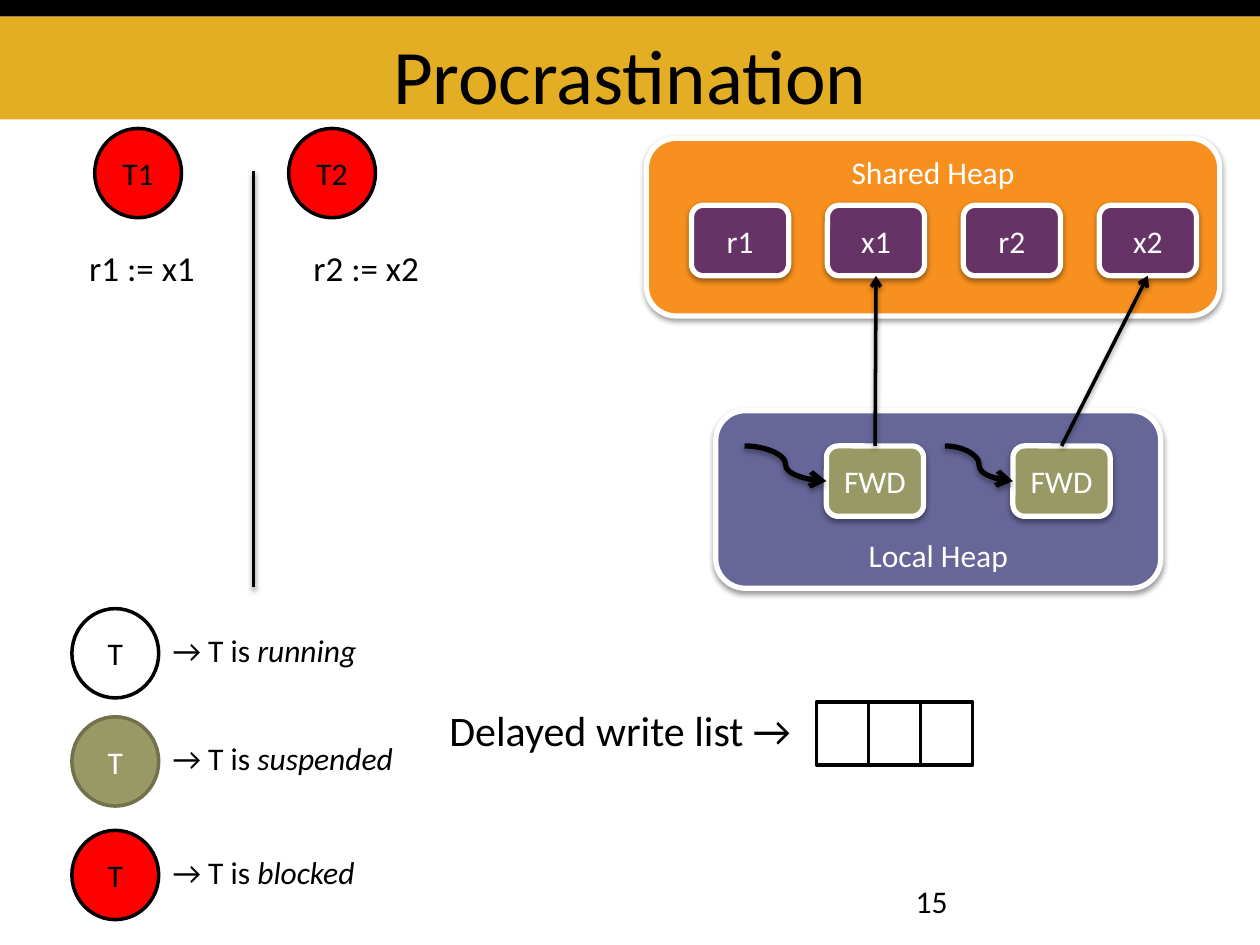
from dataclasses import dataclass
from typing import Any, NamedTuple, Optional

from lxml import etree
from pptx import Presentation
from pptx.dml.color import RGBColor
from pptx.enum.shapes import MSO_CONNECTOR, MSO_SHAPE
from pptx.enum.text import MSO_ANCHOR, PP_ALIGN
from pptx.oxml.ns import qn
from pptx.util import Cm, Pt

RECT, ROUND, OVAL = MSO_SHAPE.RECTANGLE, MSO_SHAPE.ROUNDED_RECTANGLE, MSO_SHAPE.OVAL
LINE, CURVE = MSO_CONNECTOR.STRAIGHT, MSO_CONNECTOR.CURVE
TOP, MIDDLE, BOTTOM = MSO_ANCHOR.TOP, MSO_ANCHOR.MIDDLE, MSO_ANCHOR.BOTTOM
LEFT, CENTER = PP_ALIGN.LEFT, PP_ALIGN.CENTER
TOP_SIDE, BOTTOM_SIDE = 0, 2


class Shade(NamedTuple):
    blur: float
    drop: float
    alpha: int


@dataclass(frozen=True)
class Theme:
    font: str = "Calibri"
    black: str = "000000"
    white: str = "FFFFFF"
    gold: str = "E3AE24"
    orange: str = "F7901E"
    plum: str = "663366"
    slate: str = "666699"
    olive: str = "999966"
    moss: str = "71714B"
    red: str = "FF0000"
    title: int = 44
    list: int = 24
    code: int = 20
    body: int = 18
    thin: int = 2
    thick: int = 3
    soft: Shade = Shade(3.1, 1.6, 38)
    deep: Shade = Shade(3.1, 1.8, 35)


T = Theme()


class Box(NamedTuple):
    left: float
    top: float
    width: float
    height: float

    def place(self) -> tuple:
        return tuple(Cm(n) for n in self)


class Look(NamedTuple):
    fill: str
    line: Optional[str] = None
    weight: float = T.thin
    ink: str = T.white
    shade: Optional[Shade] = None


class State(NamedTuple):
    word: str
    top: float
    width: float
    look: Look


HEAP = Look(T.orange, T.white, T.thick, shade=T.soft)
LOCAL = HEAP._replace(fill=T.slate)
CELL = HEAP._replace(fill=T.plum)
FORWARD = HEAP._replace(fill=T.olive)
RUNNING = Look(T.white, T.black, ink=T.black)
BLOCKED = RUNNING._replace(fill=T.red)
PAUSED = Look(T.olive, T.moss)

CELL_W, CELL_H = 1.96, 1.42
DISC_W, DISC_H = 1.75, 1.8
FORWARD_TOP = 8.99

STATES = (
    State("running", 12.27, 5.05, RUNNING),
    State("suspended", 14.45, 5.79, PAUSED),
    State("blocked", 16.74, 5.05, BLOCKED),
)


def cast(item: Any, shade: Shade) -> None:
    """Give a shape or connector a shadow that falls straight down."""
    props = item.element.spPr
    effects = props.find(qn("a:effectLst"))
    if effects is None:
        effects = etree.SubElement(props, qn("a:effectLst"))
    outer = etree.SubElement(
        effects, qn("a:outerShdw"), blurRad=str(Pt(shade.blur)),
        dist=str(Pt(shade.drop)), dir="5400000", rotWithShape="0")
    tint = etree.SubElement(outer, qn("a:srgbClr"), val=T.black)
    etree.SubElement(tint, qn("a:alpha"), val=str(shade.alpha * 1000))


def add_run(para: Any, text: str, size: int, ink: str, slant: bool = False) -> None:
    run = para.add_run()
    run.text = text
    font = run.font
    font.name, font.size = T.font, Pt(size)
    font.color.rgb = RGBColor.from_string(ink)
    if slant:
        font.italic = True


def add_block(slide: Any, kind: Any, box: Box, look: Look,
              text: str = "", anchor: Any = MIDDLE) -> Any:
    shape = slide.shapes.add_shape(kind, *box.place())
    shape.shadow.inherit = False
    shape.fill.solid()
    shape.fill.fore_color.rgb = RGBColor.from_string(look.fill)
    if look.line:
        shape.line.color.rgb = RGBColor.from_string(look.line)
        shape.line.width = Pt(look.weight)
    else:
        shape.line.fill.background()
    if look.shade:
        cast(shape, look.shade)
    if text:
        frame = shape.text_frame
        frame.vertical_anchor = anchor
        para = frame.paragraphs[0]
        para.alignment = CENTER
        add_run(para, text, T.body, look.ink)
    return shape


def add_text(slide: Any, box: Box, text: str, size: int,
             slanted: str = "", align: Any = LEFT, wrap: bool = True) -> Any:
    """Add a text box, with an italic run after the plain one if given."""
    frame = slide.shapes.add_textbox(*box.place()).text_frame
    frame.word_wrap = wrap
    para = frame.paragraphs[0]
    para.alignment = align
    add_run(para, text, size, T.black)
    if slanted:
        add_run(para, slanted, size, T.black, slant=True)
    return frame


def add_link(slide: Any, kind: Any, ends: tuple, weight: float, shade: Shade,
             arrow: bool = True) -> Any:
    link = slide.shapes.add_connector(kind, *(Cm(n) for n in ends))
    link.line.color.rgb = RGBColor.from_string(T.black)
    link.line.width = Pt(weight)
    if arrow:
        etree.SubElement(link.element.spPr.find(qn("a:ln")), qn("a:tailEnd"), type="arrow")
    cast(link, shade)
    return link


def draw_head(slide: Any) -> None:
    band = Box(0, 0.33, 25.4, 2.08)
    add_block(slide, RECT, band, Look(T.gold))
    add_block(slide, RECT, Box(0, 0, 25.4, 0.33), Look(T.black))
    frame = add_text(slide, band._replace(left=1.27, width=22.86),
                     "Procrastination", T.title, align=CENTER)
    frame.vertical_anchor = BOTTOM
    frame.margin_bottom = 0


def draw_threads(slide: Any) -> None:
    add_link(slide, LINE, (5.11, 3.45, 5.11, 11.84), T.thin, T.soft, arrow=False)
    for name, left in (("T1", 1.91), ("T2", 5.82)):
        add_block(slide, OVAL, Box(left, 2.59, DISC_W, DISC_H), BLOCKED, name)
    add_text(slide, Box(1.55, 4.85, 3.56, 1.12), "r1 := x1", T.code)
    frame = add_text(slide, Box(5.11, 4.85, 4.34, 1.12), "r2 := x2", T.code)
    frame.margin_left = Cm(1.21)


def draw_heaps(slide: Any) -> None:
    add_block(slide, ROUND, Box(13.03, 2.79, 11.56, 3.58), HEAP, "Shared Heap", TOP)
    add_block(slide, ROUND, Box(14.43, 8.28, 8.97, 3.58), LOCAL, "Local Heap", BOTTOM)
    cells = {}
    for i, name in enumerate(("r1", "x1", "r2", "x2")):
        box = Box(13.94 + 2.74 * i, 4.14, CELL_W, CELL_H)
        cells[name] = add_block(slide, ROUND, box, CELL, name)
    for left, start, goal in ((16.66, 15.01, "x1"), (20.42, 19.05, "x2")):
        box = Box(left, FORWARD_TOP, CELL_W, CELL_H)
        node = add_block(slide, ROUND, box, FORWARD, "FWD")
        add_link(slide, CURVE, (start, FORWARD_TOP, left, FORWARD_TOP + CELL_H / 2),
                 T.thick, T.deep)
        link = add_link(slide, LINE, (0, 0, 0, 0), T.thin, T.soft)
        link.begin_connect(node, TOP_SIDE)
        link.end_connect(cells[goal], BOTTOM_SIDE)


def draw_legend(slide: Any) -> None:
    for state in STATES:
        add_block(slide, OVAL, Box(1.45, state.top, DISC_W, DISC_H), state.look, "T")
        add_text(slide, Box(3.23, state.top + 0.33, state.width, 1.02),
                 "→ T is ", T.body, state.word)


def draw_list(slide: Any) -> None:
    add_text(slide, Box(8.81, 14.07, 7.57, 1.27), "Delayed write list →", T.list, wrap=False)
    for i in range(3):
        add_block(slide, RECT, Box(16.46 + 1.05 * i, 14.15, 1.05, 1.27), RUNNING)


def main() -> None:
    deck = Presentation()
    deck.slide_width, deck.slide_height = Cm(25.4), Cm(19.05)
    slide = deck.slides.add_slide(deck.slide_layouts[6])
    for draw in (draw_head, draw_threads, draw_heaps, draw_legend, draw_list):
        draw(slide)
    add_text(slide, Box(18.21, 17.65, 5.92, 1.02), "15", T.body)
    deck.save("out.pptx")


if __name__ == "__main__":
    main()
